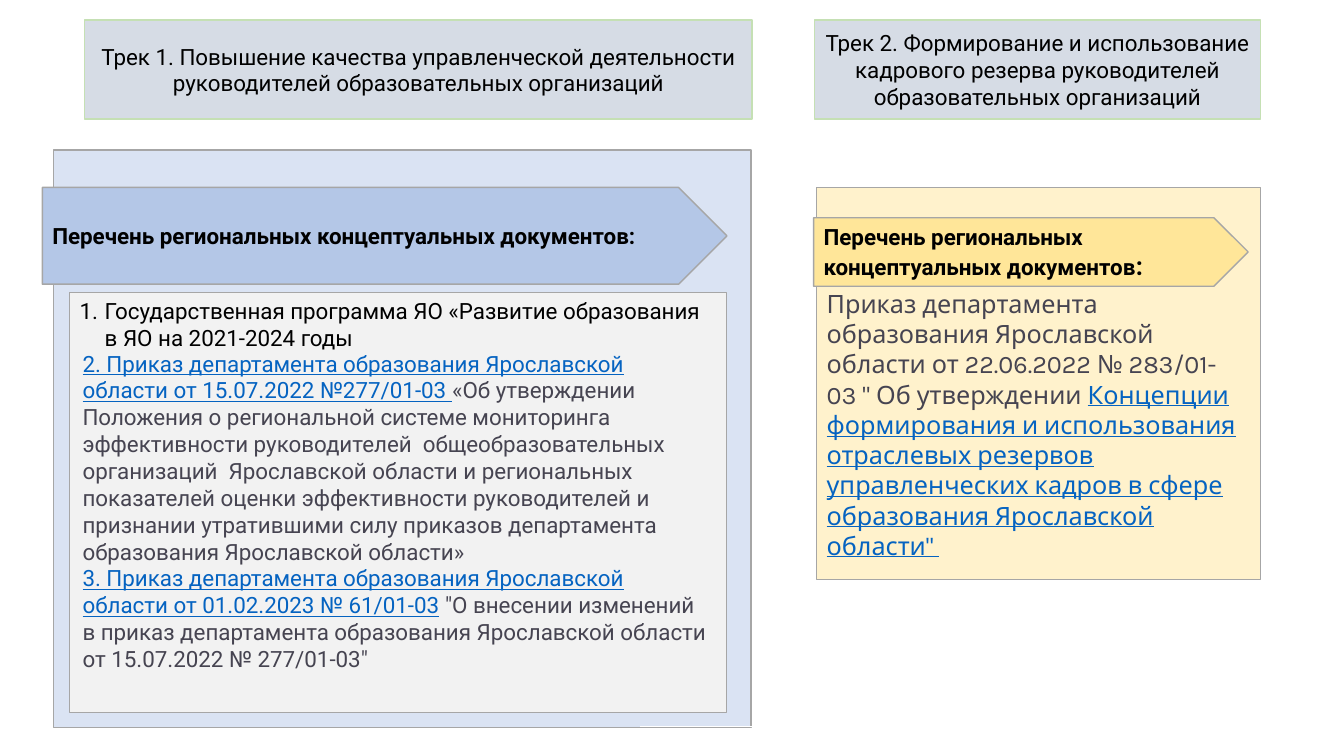
"""Build the slide on two management tracks and their regional documents."""
import pptx
import pptx.dml.color
import pptx.enum.shapes
import pptx.enum.text
import pptx.oxml
import pptx.util
from pptx.util import Inches

COLOURS = {
    "header": "D6DCE5", "header_line": "C5E0B4", "line": "A6A6A6",
    "blue_panel": "DAE3F3", "blue_arrow": "B4C7E7", "list": "F2F2F2",
    "yellow_panel": "FFF2CC", "yellow_arrow": "FFE699",
    "black": "000000", "link": "0563C1", "body": "464451", "white": "FFFFFF",
}
SHAPES = pptx.enum.shapes.MSO_SHAPE
ALIGN = pptx.enum.text.PP_ALIGN
ANCHOR = pptx.enum.text.MSO_ANCHOR


def colour(name):
    """Return the named colour."""
    return pptx.dml.color.RGBColor.from_string(COLOURS[name])


def add_run(paragraph, text, size=16, font="Roboto", tint="black", bold=False):
    """Add one formatted run; text in the link colour is underlined."""
    run = paragraph.add_run()
    run.text = text
    run.font.size = pptx.util.Pt(size)
    run.font.name = font
    run.font.bold = bold
    run.font.underline = tint == "link"
    run.font.color.rgb = colour(tint)


def add_block(slide, kind, box, fill, line="line", width=1):
    """Add a filled, outlined shape and return its first paragraph."""
    shape = slide.shapes.add_shape(kind, *map(Inches, box))
    shape.shadow.inherit = False
    shape.fill.solid()
    shape.fill.fore_color.rgb = colour(fill)
    shape.line.color.rgb = colour(line)
    shape.line.width = pptx.util.Pt(width)
    shape.text_frame.word_wrap = True
    shape.text_frame.vertical_anchor = ANCHOR.MIDDLE
    paragraph = shape.text_frame.paragraphs[0]
    paragraph.alignment = ALIGN.LEFT
    return shape, paragraph


def add_header(slide, left, width, text):
    """Add the centred heading of a track."""
    shape, paragraph = add_block(slide, SHAPES.RECTANGLE, (left, 0.2, width, 0.98),
                                 "header", "header_line")
    paragraph.alignment = ALIGN.CENTER
    add_run(paragraph, text)


def add_arrow(slide, box, fill, colon_size):
    """Add the pentagon that introduces a list of documents."""
    shape, paragraph = add_block(slide, SHAPES.PENTAGON, box, fill)
    add_run(paragraph, "Перечень региональных концептуальных документов", bold=True)
    add_run(paragraph, ":", size=colon_size, bold=True)


def add_numbered_box(slide, box, text):
    """Add a box that holds one numbered item at its top."""
    shape, paragraph = add_block(slide, SHAPES.RECTANGLE, box, "list", width=0.75)
    shape.text_frame.vertical_anchor = ANCHOR.TOP
    properties = paragraph._p.get_or_add_pPr()
    properties.set("marL", str(Inches(0.25)))
    properties.set("indent", str(-Inches(0.25)))
    namespace = 'xmlns:a="http://schemas.openxmlformats.org/drawingml/2006/main"'
    for element in (f'<a:buClr {namespace}><a:srgbClr val="{COLOURS["black"]}"/></a:buClr>',
                    f'<a:buFont {namespace} typeface="+mj-lt"/>',
                    f'<a:buAutoNum {namespace} type="arabicPeriod"/>'):
        properties.append(pptx.oxml.parse_xml(element))
    add_run(paragraph, text)


def add_text(slide, box, paragraphs, size, font):
    """Add a text box from paragraphs of (text, colour) runs."""
    frame = slide.shapes.add_textbox(*map(Inches, box)).text_frame
    frame.word_wrap = True
    for index, runs in enumerate(paragraphs):
        paragraph = frame.add_paragraph() if index else frame.paragraphs[0]
        for text, tint in runs:
            add_run(paragraph, text, size, font, tint)


def add_rule(slide, start, end):
    """Add a thin white line."""
    rule = slide.shapes.add_connector(pptx.enum.shapes.MSO_CONNECTOR.STRAIGHT,
                                      *map(Inches, start + end))
    rule.line.color.rgb = colour("white")
    rule.line.width = pptx.util.Pt(0.5)
    rule._element.spPr.append(pptx.oxml.parse_xml(
        '<a:effectLst xmlns:a="http://schemas.openxmlformats.org/drawingml/2006/main"/>'))


def main():
    """Build and save the presentation."""
    presentation = pptx.Presentation()
    presentation.slide_width = Inches(13.33)
    presentation.slide_height = Inches(7.5)
    slide = presentation.slides.add_slide(presentation.slide_layouts[6])

    add_block(slide, SHAPES.RECTANGLE, (0.53, 1.49, 6.92, 5.73), "blue_panel")
    add_numbered_box(slide, (0.69, 2.9, 6.52, 4.17),
                     "Государственная программа ЯО «Развитие образования в ЯО на 2021-2024 годы")
    add_arrow(slide, (0.42, 1.86, 6.79, 0.96), "blue_arrow", 16)
    add_block(slide, SHAPES.RECTANGLE, (8.1, 1.86, 4.4, 3.89), "yellow_panel")
    add_arrow(slide, (8.07, 2.16, 4.31, 0.68), "yellow_arrow", 18)

    add_header(slide, 0.84, 6.62, "Трек 1. Повышение качества управленческой деятельности "
               "руководителей образовательных организаций")
    add_header(slide, 8.08, 4.42, "Трек 2. Формирование и использование кадрового резерва "
               "руководителей образовательных организаций")
    add_rule(slide, (6.35, 7.21), (11.57, 7.21))

    add_text(slide, (0.72, 3.42, 6.39, 3.33), [
        [("2. Приказ департамента образования Ярославской области "
          "от 15.07.2022 №277/01-03 ", "link"),
         ("«Об утверждении Положения о региональной системе мониторинга эффективности "
          "руководителей  общеобразовательных организаций  Ярославской области и "
          "региональных показателей оценки эффективности руководителей и признании "
          "утратившими силу приказов департамента образования Ярославской области»", "body")],
        [("3. Приказ департамента образования Ярославской области "
          "от 01.02.2023 № 61/01-03", "link"),
         (' "О внесении изменений в приказ департамента образования Ярославской области '
          'от 15.07.2022 № 277/01-03"', "body")],
    ], 16, "Roboto")
    add_text(slide, (8.1, 2.81, 4.29, 2.83), [
        [("Приказ департамента образования Ярославской области от 22.06.2022 "
          '№ 283/01-03 " Об утверждении ', "body"),
         ("Концепции формирования и использования отраслевых резервов управленческих "
          'кадров в сфере образования Ярославской области" ', "link")],
    ], 18, "Karla")
    presentation.save("out.pptx")


if __name__ == "__main__":
    main()
